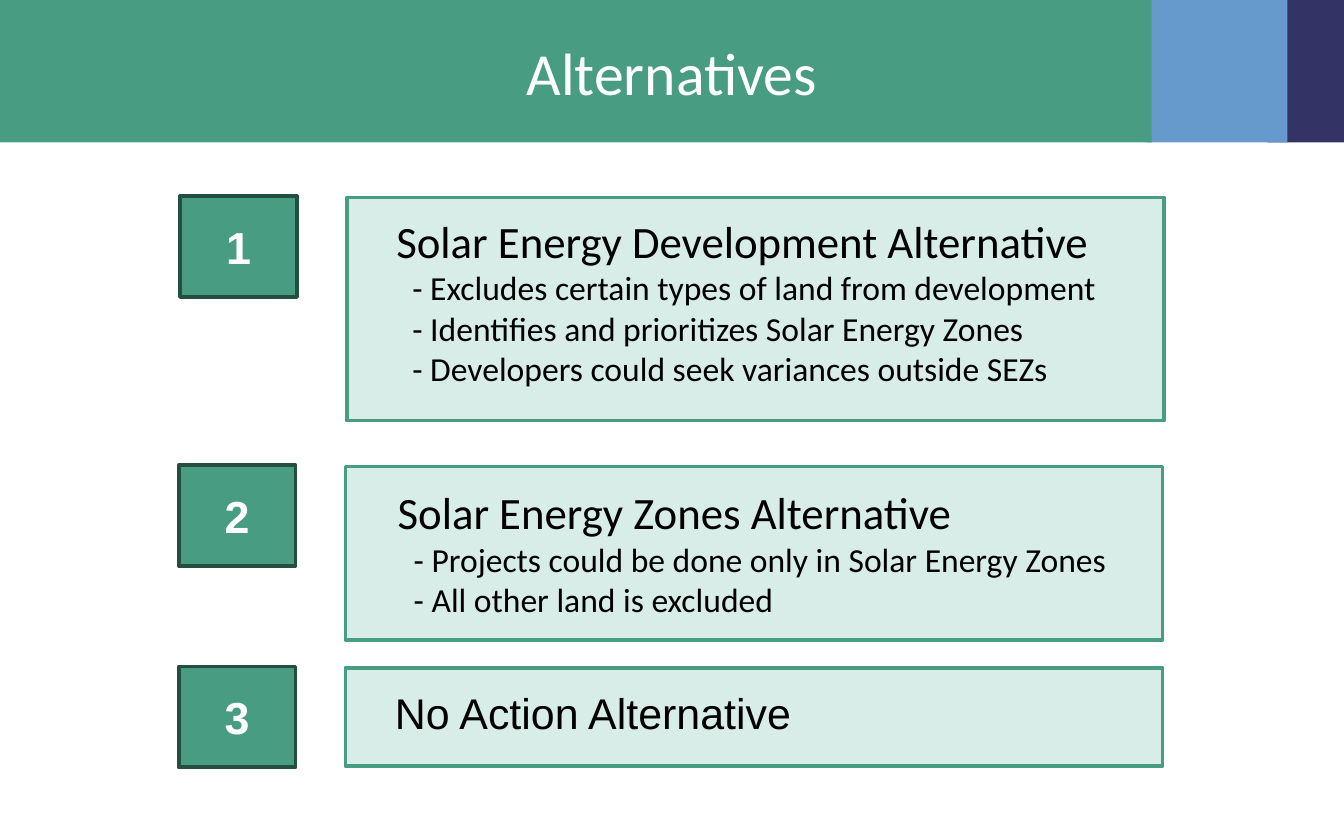
from pptx import Presentation
from pptx.dml.color import RGBColor
from pptx.enum.shapes import MSO_SHAPE
from pptx.enum.text import MSO_ANCHOR, PP_ALIGN
from pptx.util import Inches, Pt

RECT = MSO_SHAPE.RECTANGLE
MIDDLE = MSO_ANCHOR.MIDDLE
CENTER = PP_ALIGN.CENTER
COLORS = {
    "navy": "333366", "blue": "6699CC", "green": "489C81", "dark": "244E40",
    "pale": "D8EDE7", "white": "FFFFFF", "black": "000000",
}

deck = Presentation()
deck.slide_width, deck.slide_height = Inches(10), Inches(6.25)
slide = deck.slides.add_slide(deck.slide_layouts[6])


def add_rect(left, top, width, height, fill, line=None):
    box = slide.shapes.add_shape(
        RECT, Inches(left), Inches(top), Inches(width), Inches(height))
    box.shadow.inherit = False
    box.fill.solid()
    box.fill.fore_color.rgb = RGBColor.from_string(COLORS[fill])
    if line:
        box.line.color.rgb = RGBColor.from_string(COLORS[line])
        box.line.width = Pt(2)
    else:
        box.line.fill.background()
    return box


def add_run(para, text, size, color, font="Calibri", bold=False):
    run = para.add_run()
    run.text = text
    run.font.size = Pt(size)
    run.font.name = font
    run.font.bold = bold
    run.font.color.rgb = RGBColor.from_string(COLORS[color])


# Header band and title
for left, width, fill in [(9.43, 0.58, "navy"), (8.53, 1.05, "blue"), (0, 8.57, "green")]:
    add_rect(left, 0, min(width, 10 - left), 1.06, fill)

title = slide.shapes.add_textbox(Inches(0.5), Inches(0.12), Inches(9), Inches(0.83))
frame = title.text_frame
frame.word_wrap = True
frame.vertical_anchor = MIDDLE
frame.paragraphs[0].alignment = CENTER
add_run(frame.paragraphs[0], "Alternatives", 32, "white")

# Numbered alternatives: left, top, panel height, text place, heading, font, size, points
rows = [
    (1.34, 1.46, 1.66, (2.85, 1.54, 1.41), "Solar Energy Development Alternative",
     "Calibri", 24, ["Excludes certain types of land from development",
                     "Identifies and prioritizes Solar Energy Zones",
                     "Developers could seek variances outside SEZs"]),
    (1.33, 3.46, 1.29, (2.86, 3.56, 1.11), "Solar Energy Zones Alternative",
     "Calibri", 24, ["Projects could be done only in Solar Energy Zones",
                     "All other land is excluded"]),
    (1.33, 4.96, 0.73, (2.84, 5.06, 0.49), "No Action Alternative", "Arial", 23, []),
]
for number, (left, top, height, place, head, font, size, points) in enumerate(rows, 1):
    add_rect(left + 1.24, top + 0.01, 6.08, height, "pale", "green")

    badge = add_rect(left, top, 0.87, 0.75, "green", "dark")
    badge.text_frame.vertical_anchor = MIDDLE
    para = badge.text_frame.paragraphs[0]
    para.alignment = CENTER
    add_run(para, str(number), 24, "white", "Arial", True)

    x, y, tall = place
    label = slide.shapes.add_textbox(Inches(x), Inches(y), Inches(5.65), Inches(tall))
    frame = label.text_frame
    frame.word_wrap = True
    add_run(frame.paragraphs[0], head, size, "black", font)
    for point in points:
        para = frame.add_paragraph()
        para.level = 1
        props = para._p.get_or_add_pPr()
        props.set("marL", str(Inches(0.12)))
        props.set("indent", "0")
        add_run(para, "- " + point, 18, "black")

deck.save("out.pptx")
